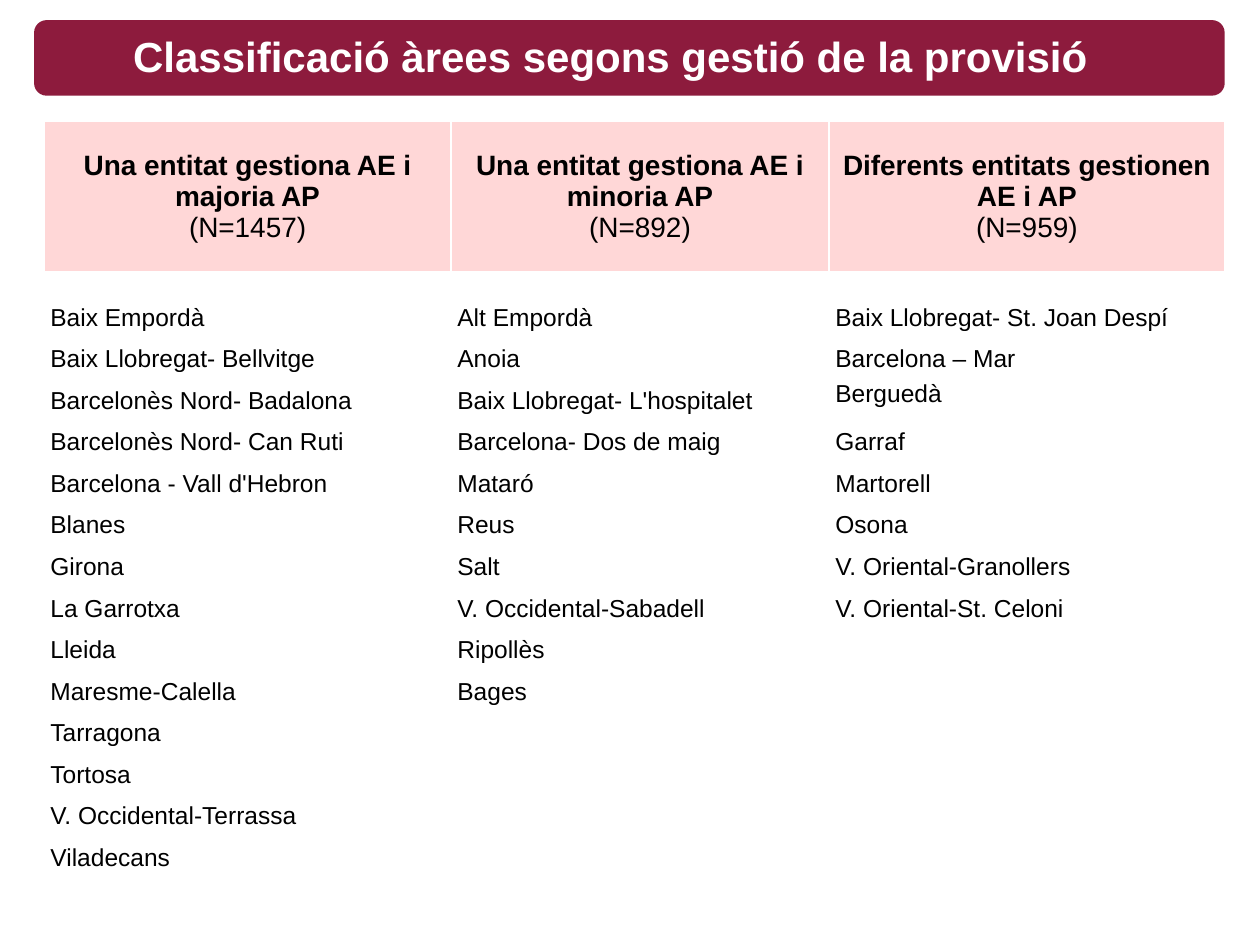
from itertools import zip_longest

from lxml.etree import SubElement
from pptx import Presentation
from pptx.dml.color import RGBColor
from pptx.enum.shapes import MSO_SHAPE as Shape
from pptx.enum.text import MSO_ANCHOR as Anchor, PP_ALIGN as Align
from pptx.oxml.ns import qn
from pptx.util import Inches, Pt

WINE = RGBColor(0x8D, 0x1B, 0x3D)
PINK = RGBColor(0xFF, 0x99, 0x99)
WHITE = RGBColor(0xFF, 0xFF, 0xFF)
BLACK = RGBColor(0, 0, 0)

COLUMN_WIDTHS = [3.23, 3, 3.14]
HEADER_HEIGHT, FIRST_HEIGHT, ROW_HEIGHT = 1.21, 0.46, 0.33

HEADERS = [
    ("Una entitat gestiona AE i majoria AP", "(N=1457)"),
    ("Una entitat gestiona AE i minoria AP", "(N=892)"),
    ("Diferents entitats gestionen AE i AP", "(N=959)"),
]
AREAS = [
    ["Baix Empordà", "Baix Llobregat- Bellvitge", "Barcelonès Nord- Badalona",
     "Barcelonès Nord- Can Ruti", "Barcelona - Vall d'Hebron", "Blanes",
     "Girona", "La Garrotxa", "Lleida", "Maresme-Calella", "Tarragona",
     "Tortosa", "V. Occidental-Terrassa", "Viladecans"],
    ["Alt Empordà", "Anoia", "Baix Llobregat- L'hospitalet",
     "Barcelona- Dos de maig", "Mataró", "Reus", "Salt",
     "V. Occidental-Sabadell", "Ripollès", "Bages"],
    ["Baix Llobregat- St. Joan Despí", "Barcelona – Mar", "Berguedà",
     "Garraf", "Martorell", "Osona", "V. Oriental-Granollers",
     "V. Oriental-St. Celoni"],
]


def write(para, text, size, color, bold=False):
    span = para.add_run()
    span.text = text
    span.font.color.rgb = color
    for name, value in {"name": "Arial", "size": Pt(size), "bold": bold}.items():
        setattr(span.font, name, value)


def format_cell(cell, anchor, bottom_width):
    for name, value in {"margin_left": Inches(0.05), "margin_right": Inches(0.05),
                        "margin_top": 0, "margin_bottom": 0,
                        "vertical_anchor": anchor}.items():
        setattr(cell, name, value)
    properties = cell._tc.get_or_add_tcPr()
    for side, width in {"L": 1, "R": 1, "T": 1, "B": bottom_width}.items():
        line = SubElement(properties, qn(f"a:ln{side}"), w=str(Pt(width)))
        solid = SubElement(line, qn("a:solidFill"))
        SubElement(solid, qn("a:srgbClr"), val=str(WHITE))


deck = Presentation()
deck.slide_width, deck.slide_height = Inches(10), Inches(7.5)
slide = deck.slides.add_slide(deck.slide_layouts[5])

# Title banner
banner = slide.shapes.add_shape(Shape.ROUNDED_RECTANGLE, Inches(0.27), Inches(0.16),
                                Inches(9.45), Inches(0.6))
banner.shadow.inherit = False
banner.fill.solid()
banner.fill.fore_color.rgb = WINE
banner.line.fill.background()

# Title, brought in front of the banner
title = slide.shapes.title
for name, value in {"left": 0.24, "top": 0.16, "width": 9.21, "height": 0.57}.items():
    setattr(title, name, Inches(value))
title.text_frame.vertical_anchor = Anchor.MIDDLE
heading = title.text_frame.paragraphs[0]
heading.alignment = Align.CENTER
write(heading, "Classificació àrees segons gestió de la provisió", 24, WHITE, True)
title.element.getparent().append(title.element)

# Table grid
row_heights = [HEADER_HEIGHT, FIRST_HEIGHT] + [ROW_HEIGHT] * (len(AREAS[0]) - 1)
table = slide.shapes.add_table(len(row_heights), len(COLUMN_WIDTHS), Inches(0.35),
                               Inches(0.96), Inches(sum(COLUMN_WIDTHS)),
                               Inches(sum(row_heights))).table
table.first_row = table.horz_banding = False
for column, width in zip(table.columns, COLUMN_WIDTHS):
    column.width = Inches(width)
for row, height in zip(table.rows, row_heights):
    row.height = Inches(height)

# Header cells
for column, (group, count) in enumerate(HEADERS):
    cell = table.cell(0, column)
    format_cell(cell, Anchor.MIDDLE, 3)
    cell.fill.solid()
    cell.fill.fore_color.rgb = PINK
    tint = cell._tc.tcPr.find(qn("a:solidFill")).find(qn("a:srgbClr"))
    SubElement(tint, qn("a:alpha"), val="39000")
    frame = cell.text_frame
    for para, text, bold in ((frame.paragraphs[0], group, True),
                             (frame.add_paragraph(), count, False)):
        para.alignment = Align.CENTER
        write(para, text, 16, BLACK, bold)

# Area cells
for row, names in enumerate(zip_longest(*AREAS, fillvalue=""), start=1):
    for column, area in enumerate(names):
        cell = table.cell(row, column)
        format_cell(cell, Anchor.MIDDLE if area == "Berguedà" else Anchor.BOTTOM, 1)
        cell.fill.background()
        if area:
            write(cell.text_frame.paragraphs[0], area, 14, BLACK)

deck.save("out.pptx")
